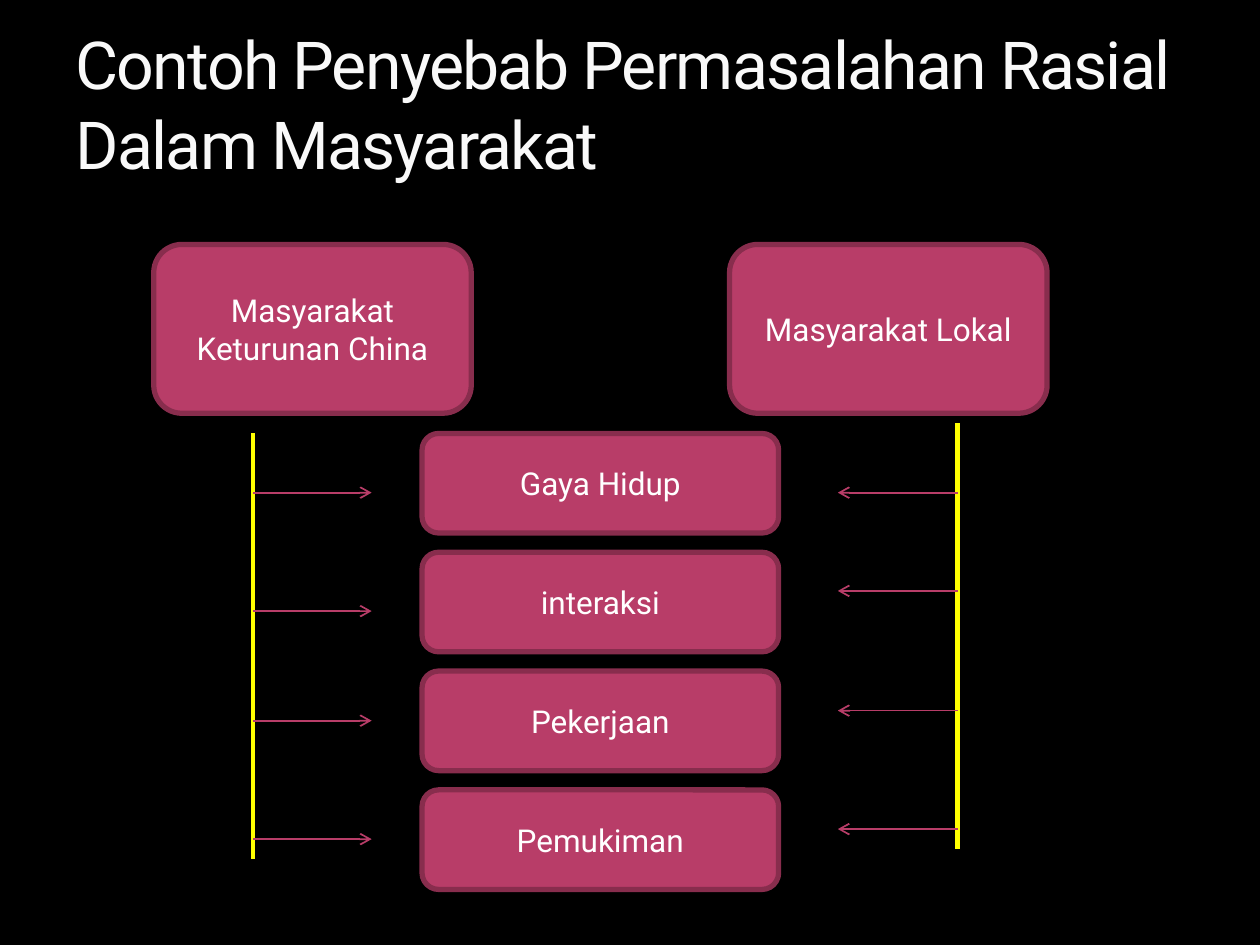
from pptx import Presentation
from pptx.dml.color import RGBColor
from pptx.enum.shapes import MSO_CONNECTOR, MSO_SHAPE
from pptx.enum.text import MSO_ANCHOR, MSO_AUTO_SIZE, PP_ALIGN
from pptx.oxml import parse_xml
from pptx.oxml.ns import nsdecls
from pptx.oxml.xmlchemy import OxmlElement
from pptx.util import Inches, Pt

COLORS = {
    "background": "000000",
    "title": "F9F9F9",
    "title_outline": "9C3888",
    "text": "FFFFFF",
    "box": "B83D68",
    "box_line": "882D4D",
    "stem": "FFFF00",
}
FONT = "Roboto"


def color(name):
    return RGBColor.from_string(COLORS[name])


def write_text(shape, text, size=18, ink="text", align=PP_ALIGN.CENTER,
               anchor=MSO_ANCHOR.MIDDLE):
    frame = shape.text_frame
    frame.word_wrap = True
    frame.auto_size = MSO_AUTO_SIZE.NONE
    frame.vertical_anchor = anchor
    paragraph = frame.paragraphs[0]
    paragraph.alignment = align
    run = paragraph.add_run()
    run.text = text
    run.font.name = FONT
    run.font.size = Pt(size)
    run.font.color.rgb = color(ink)
    return run


def add_title(slide, text, left, top, width, height):
    title = slide.shapes.title
    title.left, title.top = Inches(left), Inches(top)
    title.width, title.height = Inches(width), Inches(height)
    run = write_text(title, text, size=37.8, ink="title",
                     align=PP_ALIGN.LEFT, anchor=MSO_ANCHOR.BOTTOM)
    # Tight letter spacing and a faint outline
    properties = run.font._element
    properties.set("spc", "-100")
    properties.insert(0, parse_xml(
        f'<a:ln {nsdecls("a")} w="3175"><a:solidFill>'
        f'<a:srgbClr val="{COLORS["title_outline"]}"><a:alpha val="25000"/>'
        '</a:srgbClr></a:solidFill></a:ln>'))


def add_box(slide, text, left, top, width, height):
    box = slide.shapes.add_shape(MSO_SHAPE.ROUNDED_RECTANGLE, Inches(left),
                                 Inches(top), Inches(width), Inches(height))
    box.shadow.inherit = False
    box.fill.solid()
    box.fill.fore_color.rgb = color("box")
    box.line.color.rgb = color("box_line")
    box.line.width = Pt(3)
    write_text(box, text)


def add_line(slide, start, end, ink, weight, arrow=False):
    points = [Inches(value) for value in (*start, *end)]
    line = slide.shapes.add_connector(MSO_CONNECTOR.STRAIGHT, *points)
    line.line.color.rgb = color(ink)
    line.line.width = Pt(weight)
    if arrow:
        tail = OxmlElement("a:tailEnd")
        tail.set("type", "arrow")
        line.line._get_or_add_ln().append(tail)
    line._element.spPr.append(OxmlElement("a:effectLst"))


def add_causes(slide, causes, left, top, width, height, pitch):
    for index, cause in enumerate(causes):
        add_box(slide, cause, left, top + index * pitch, width, height)


def add_branch(slide, x, top, height, reach, arrow_heights):
    """Vertical stem with arrows; a negative reach points to the left."""
    add_line(slide, (x, top), (x, top + height), "stem", 2.5)
    for y in arrow_heights:
        add_line(slide, (x, y), (x + reach, y), "box", 1, arrow=True)


def main():
    presentation = Presentation()
    presentation.slide_width = Inches(10)
    presentation.slide_height = Inches(7.5)
    slide = presentation.slides.add_slide(presentation.slide_layouts[5])
    slide.background.fill.solid()
    slide.background.fill.fore_color.rgb = color("background")

    add_title(slide, "Contoh Penyebab Permasalahan Rasial Dalam Masyarakat",
              0.5, 0.17, 9, 1.33)

    # The two communities
    for text, left in (("Masyarakat Keturunan China", 1.22),
                       ("Masyarakat Lokal", 5.79)):
        add_box(slide, text, left, 1.94, 2.52, 1.34)

    # Shared causes in the middle
    add_causes(slide, ["Gaya Hidup", "interaksi", "Pekerjaan", "Pemukiman"],
               3.35, 3.44, 2.83, 0.79, pitch=0.943)

    # Stems and arrows towards the causes
    add_branch(slide, 2.01, 3.44, 3.38, 0.94, (3.91, 4.85, 5.72, 6.66))
    add_branch(slide, 7.6, 3.36, 3.38, -0.95, (3.91, 4.69, 5.64, 6.58))

    presentation.save("out.pptx")


if __name__ == "__main__":
    main()
